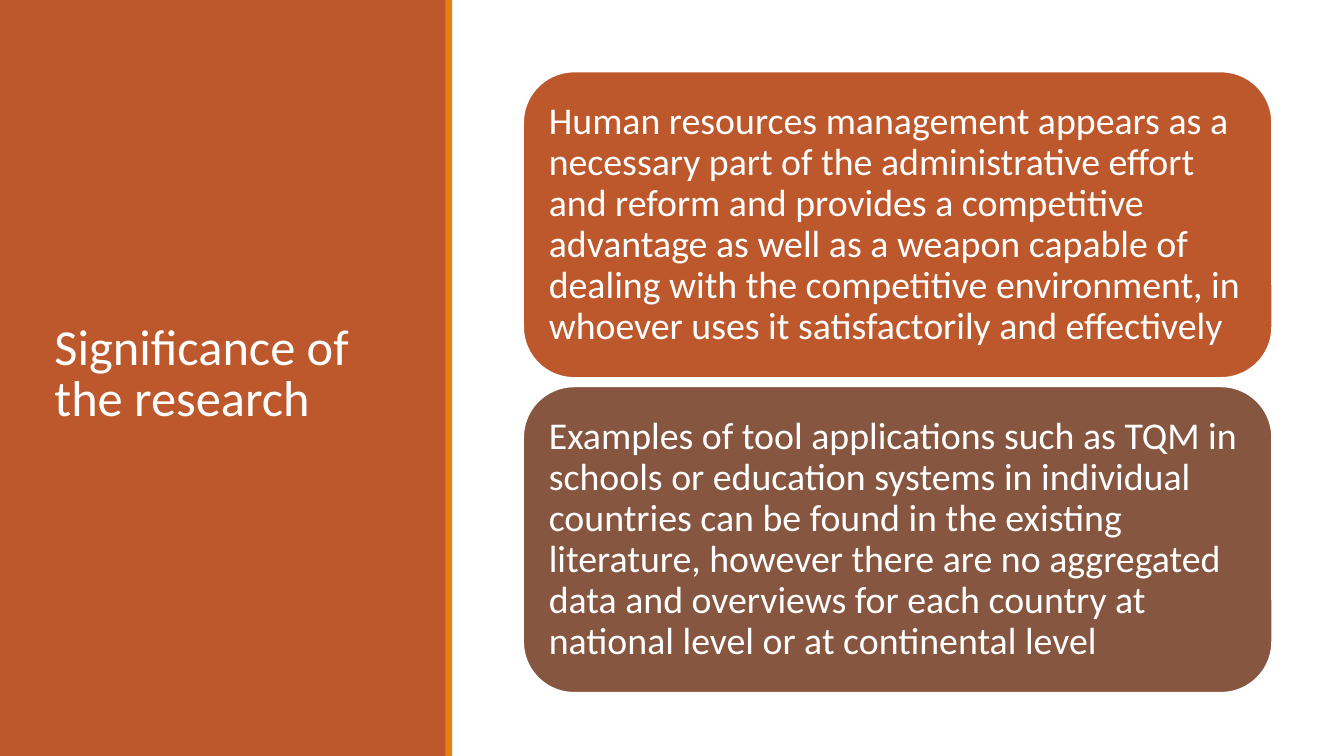
from pptx import Presentation
from pptx.dml.color import RGBColor
from pptx.enum.shapes import MSO_SHAPE
from pptx.enum.text import MSO_ANCHOR, MSO_AUTO_SIZE, PP_ALIGN
from pptx.util import Pt

RECT, ROUND = MSO_SHAPE.RECTANGLE, MSO_SHAPE.ROUNDED_RECTANGLE
MIDDLE, LEFT, FIXED = MSO_ANCHOR.MIDDLE, PP_ALIGN.LEFT, MSO_AUTO_SIZE.NONE

WIDE, HIGH = 960, 540
RUST, AMBER, BROWN, WHITE = "BD582C", "E48312", "865640", "FFFFFF"
TITLE = "Significance of the research"
CARDS = [
    (RUST, "Human resources management appears as a necessary part of the "
           "administrative effort and reform and provides a competitive advantage "
           "as well as a weapon capable of dealing with the competitive "
           "environment, in whoever uses it satisfactorily and effectively"),
    (BROWN, "Examples of tool applications such as TQM in schools or education "
            "systems in individual countries can be found in the existing "
            "literature, however there are no aggregated data and overviews for "
            "each country at national level or at continental level"),
]
PANELS = [(0, 319, RUST), (318.2, 4.8, AMBER)]  # left, width, fill
CARD_X, CARD_Y, CARD_W, CARD_H, GAP = 373.7, 51.1, 535, 218.9, 6


def color(code):
    return RGBColor.from_string(code)


def write(shape, text, size, inset=0, spacing=0.9):
    frame = shape.text_frame
    frame.word_wrap = True
    frame.auto_size = FIXED
    frame.vertical_anchor = MIDDLE
    frame.margin_left = frame.margin_right = Pt(inset)
    frame.margin_top = frame.margin_bottom = Pt(inset)
    para = frame.paragraphs[0]
    para.alignment = LEFT
    para.line_spacing = spacing
    run = para.add_run()
    run.text = text
    run.font.name = "Calibri"
    run.font.size = Pt(size)
    run.font.color.rgb = color(WHITE)


def block(slide, kind, x, y, w, h, fill, line=None):
    shape = slide.shapes.add_shape(kind, Pt(x), Pt(y), Pt(w), Pt(h))
    shape.shadow.inherit = False
    shape.fill.solid()
    shape.fill.fore_color.rgb = color(fill)
    if line:
        shape.line.color.rgb = color(line)
        shape.line.width = Pt(1.25)
    else:
        shape.line.fill.background()
    return shape


def main():
    deck = Presentation()
    deck.slide_width, deck.slide_height = Pt(WIDE), Pt(HIGH)
    slide = deck.slides.add_slide(deck.slide_layouts[5])
    slide.background.fill.solid()
    slide.background.fill.fore_color.rgb = color(WHITE)

    for x, w, fill in PANELS:
        block(slide, RECT, x, 0, w, HIGH, fill)

    title = slide.shapes.title
    title.left, title.top = Pt(38.9), Pt(41)
    title.width, title.height = Pt(242.6), Pt(454.3)
    write(title, TITLE, 36, spacing=0.85)
    slide.shapes.element.append(title.element)  # bring in front of the panels

    for i, (fill, text) in enumerate(CARDS):
        y = CARD_Y + i * (CARD_H + GAP)
        card = block(slide, ROUND, CARD_X, y, CARD_W, CARD_H, fill, WHITE)
        write(card, text, 27, inset=7.7)

    deck.save("out.pptx")


if __name__ == "__main__":
    main()
